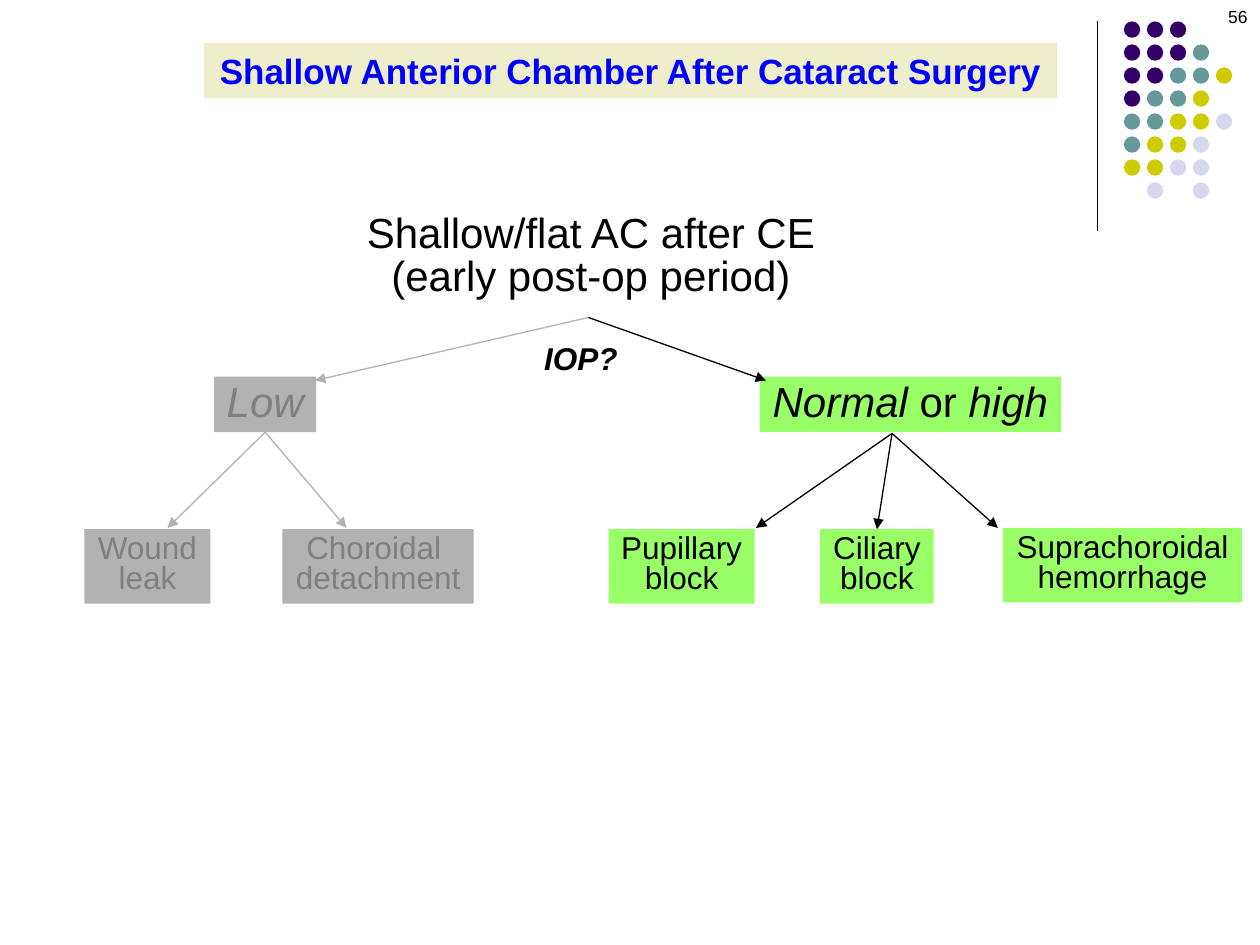
"""Build the slide on a shallow anterior chamber after cataract surgery."""
from lxml.etree import SubElement
from pptx import Presentation
from pptx.dml.color import RGBColor
from pptx.enum.shapes import MSO_CONNECTOR as LINE, MSO_SHAPE as SHAPE
from pptx.enum.text import MSO_ANCHOR as ANCHOR, MSO_AUTO_SIZE as FIT, PP_ALIGN as ALIGN
from pptx.oxml.ns import qn
from pptx.util import Inches, Pt

BLACK, GRAY, DIM, GREEN = "000000", "B2B2B2", "808080", "99FF66"
rgb = RGBColor.from_string

deck = Presentation()
deck.slide_width, deck.slide_height = Inches(10), Inches(7.5)
slide = deck.slides.add_slide(deck.slide_layouts[6])
shapes = slide.shapes


def add_text(text, at, size=18, color=BLACK, fill=None, spacing=None, bold=False,
             italics=(), align=ALIGN.CENTER, wrap=False):
    """Add lines of text split into runs at '|', with the runs in italics set so."""
    place = [Inches(length) for length in at]
    if fill:
        box = shapes.add_shape(SHAPE.RECTANGLE, *place)
        box.shadow.inherit = False
        box.fill.solid()
        box.fill.fore_color.rgb = rgb(fill)
        box.line.fill.background()
    else:
        box = shapes.add_textbox(*place)
    frame = box.text_frame
    frame.word_wrap = wrap
    frame.auto_size = FIT.NONE if wrap else FIT.SHAPE_TO_FIT_TEXT
    frame.vertical_anchor = ANCHOR.TOP
    for index, content in enumerate(text.split("\n")):
        paragraph = frame.add_paragraph() if index else frame.paragraphs[0]
        paragraph.alignment = align
        paragraph.line_spacing = spacing
        for part in content.split("|"):
            run = paragraph.add_run()
            run.text = part
            run.font.name, run.font.size = "Arial", Pt(size)
            run.font.bold, run.font.italic = bold, part in italics
            run.font.color.rgb = rgb(color)
    return box


def add_line(start, end, color=BLACK, arrow=True):
    """Add a thin straight line, with an arrowhead at its end if wanted."""
    line = shapes.add_connector(LINE.STRAIGHT, *[Inches(length) for length in start + end])
    line.line.color.rgb = rgb(color)
    line.line.width = Pt(0.75)
    if arrow:
        SubElement(line.line._get_or_add_ln(), qn("a:tailEnd"), type="triangle")
    SubElement(line._element.spPr, qn("a:effectLst"))
    return line


add_line((8.71, 0.17), (8.71, 1.83), arrow=False)

dot_colors = {"P": "330066", "T": "669999", "Y": "CCCC00", "L": "D8D8EC"}
dot_rows = ["PPP", "PPPT", "PPTTY", "PTTY", "TTYYL", "TYYL", "YYLL", " L L"]
dot_pitch = 0.73 / 4
for row, letters in enumerate(dot_rows):
    for column, letter in enumerate(letters):
        if letter in dot_colors:
            dot = shapes.add_shape(SHAPE.OVAL, Inches(8.92 + column * dot_pitch),
                                   Inches(0.17 + row * dot_pitch), Inches(0.13), Inches(0.13))
            dot.shadow.inherit = False
            dot.fill.solid()
            dot.fill.fore_color.rgb = rgb(dot_colors[letter])
            dot.line.fill.background()

add_text("Normal| or |high", (6.03, 2.99, 2.39, 0.44), size=24, fill=GREEN,
         spacing=0.85, italics=("Normal", "high"))
low = add_text("Low", (1.7, 2.99, 0.81, 0.44), size=24, color=DIM, fill=GRAY,
               spacing=0.85, italics=("Low",))

causes = {}
for cause, left, top, width, color, fill in [
    ("Wound\nleak", 0.67, 4.2, 1, DIM, GRAY),
    ("Choroidal \ndetachment", 2.24, 4.2, 1.52, DIM, GRAY),
    ("Pupillary\nblock", 4.83, 4.2, 1.16, BLACK, GREEN),
    ("Ciliary\nblock", 6.51, 4.2, 0.9, BLACK, GREEN),
    ("Suprachoroidal\nhemorrhage", 7.96, 4.19, 1.9, BLACK, GREEN),
]:
    causes[cause] = add_text(cause, (left, top, width, 0.59), color=color, fill=fill,
                             spacing=0.8)

pressure_fork = (4.67, 2.52)
add_line(pressure_fork, (2.5, 3.02), GRAY)
add_line(pressure_fork, (6.08, 3.02))
for cause_x in (1.33, 2.75):
    add_line((2.08, 3.44), (cause_x, 4.19), GRAY).begin_connect(low, 2)
add_line((7.08, 3.44), (6, 4.19))
add_line((7.08, 3.44), (6.92, 4.19)).end_connect(causes["Ciliary\nblock"], 0)
add_line((7.08, 3.44), (7.92, 4.19))

add_text("IOP?", (4.22, 2.64, 0.78, 0.4), bold=True, italics=("IOP?",), align=ALIGN.LEFT)
add_text("Shallow/flat AC after CE\n(early post-op period)", (2.8, 1.65, 3.78, 0.78),
         size=24, spacing=0.85)
add_text("56", (7.67, 0, 2.33, 0.5), size=10, align=ALIGN.RIGHT, wrap=True)
add_text("Shallow Anterior Chamber After Cataract Surgery", (1.62, 0.34, 6.77, 0.44),
         size=20, color="0000FF", fill="EEEECC", bold=True)

deck.save("out.pptx")
